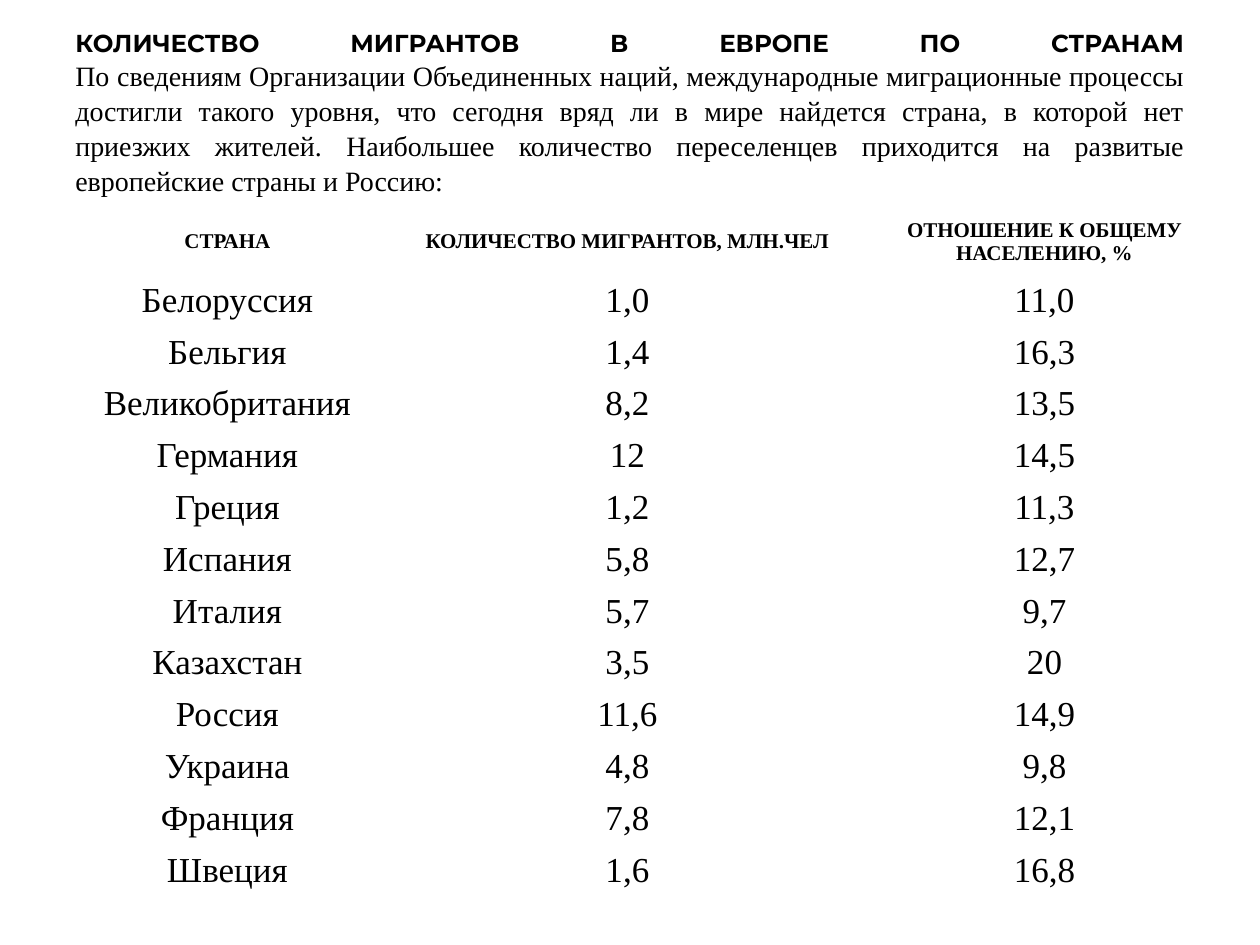
from pptx import Presentation
from pptx.dml.color import RGBColor
from pptx.enum.text import MSO_ANCHOR, PP_ALIGN
from pptx.util import Pt

COLORS = {"text": "000000"}
SERIF = "Times New Roman"
HEADING = "КОЛИЧЕСТВО МИГРАНТОВ В ЕВРОПЕ ПО СТРАНАМ"
INTRO = (
    "По сведениям Организации Объединенных наций, международные миграционные "
    "процессы достигли такого уровня, что сегодня вряд ли в мире найдется страна, "
    "в которой нет приезжих жителей. Наибольшее количество переселенцев приходится "
    "на развитые европейские страны и Россию:"
)
HEADER = ("СТРАНА", "КОЛИЧЕСТВО МИГРАНТОВ, МЛН.ЧЕЛ", "ОТНОШЕНИЕ К ОБЩЕМУ НАСЕЛЕНИЮ, %")
COUNTRIES = [
    ("Белоруссия", "1,0", "11,0"),
    ("Бельгия", "1,4", "16,3"),
    ("Великобритания", "8,2", "13,5"),
    ("Германия", "12", "14,5"),
    ("Греция", "1,2", "11,3"),
    ("Испания", "5,8", "12,7"),
    ("Италия", "5,7", "9,7"),
    ("Казахстан", "3,5", "20"),
    ("Россия", "11,6", "14,9"),
    ("Украина", "4,8", "9,8"),
    ("Франция", "7,8", "12,1"),
    ("Швеция", "1,6", "16,8"),
]
COLUMN_WIDTHS = (209.5, 247.7, 229)
HEADER_HEIGHT, ROW_HEIGHT = 37.4, 28.56


def style_font(font, name, size, bold=False):
    font.name = name
    font.size = Pt(size)
    font.bold = bold
    font.color.rgb = RGBColor.from_string(COLORS["text"])


def add_intro(s):
    tf = s.shapes.add_textbox(Pt(36), Pt(21.6), Pt(648), Pt(67)).text_frame
    tf.word_wrap = True
    tf.vertical_anchor = MSO_ANCHOR.MIDDLE
    tf.margin_top, tf.margin_bottom = Pt(21.3), Pt(3.6)
    p = tf.paragraphs[0]
    p.alignment = PP_ALIGN.JUSTIFY
    p.line_spacing = 1.04
    r = p.add_run()
    r.text = HEADING
    style_font(r.font, "Montserrat", 14, bold=True)
    p.add_line_break()
    r = p.add_run()
    r.text = INTRO
    style_font(r.font, SERIF, 16)


def fill_cell(cell, text, size, bold):
    cell.fill.background()
    cell.vertical_anchor = MSO_ANCHOR.MIDDLE
    cell.margin_left = cell.margin_right = Pt(6.5)
    cell.margin_top = cell.margin_bottom = Pt(2.8)
    cell.text = text
    p = cell.text_frame.paragraphs[0]
    p.alignment = PP_ALIGN.CENTER
    style_font(p.font, SERIF, size, bold)


def add_country_table(s):
    rows = [HEADER, *COUNTRIES]
    height = HEADER_HEIGHT + ROW_HEIGHT * len(COUNTRIES)
    table = s.shapes.add_table(
        len(rows), len(HEADER), Pt(25.2), Pt(119.5), Pt(sum(COLUMN_WIDTHS)), Pt(height)
    ).table
    table.first_row = table.horz_banding = False
    for column, width in zip(table.columns, COLUMN_WIDTHS):
        column.width = Pt(width)
    for i, values in enumerate(rows):
        is_header = i == 0
        table.rows[i].height = Pt(HEADER_HEIGHT if is_header else ROW_HEIGHT)
        for j, text in enumerate(values):
            fill_cell(table.cell(i, j), text, 12 if is_header else 20, is_header)


def main():
    prs = Presentation()
    prs.slide_width, prs.slide_height = Pt(720), Pt(540)
    s = prs.slides.add_slide(prs.slide_layouts[6])
    add_intro(s)
    add_country_table(s)
    prs.save("out.pptx")


if __name__ == "__main__":
    main()
